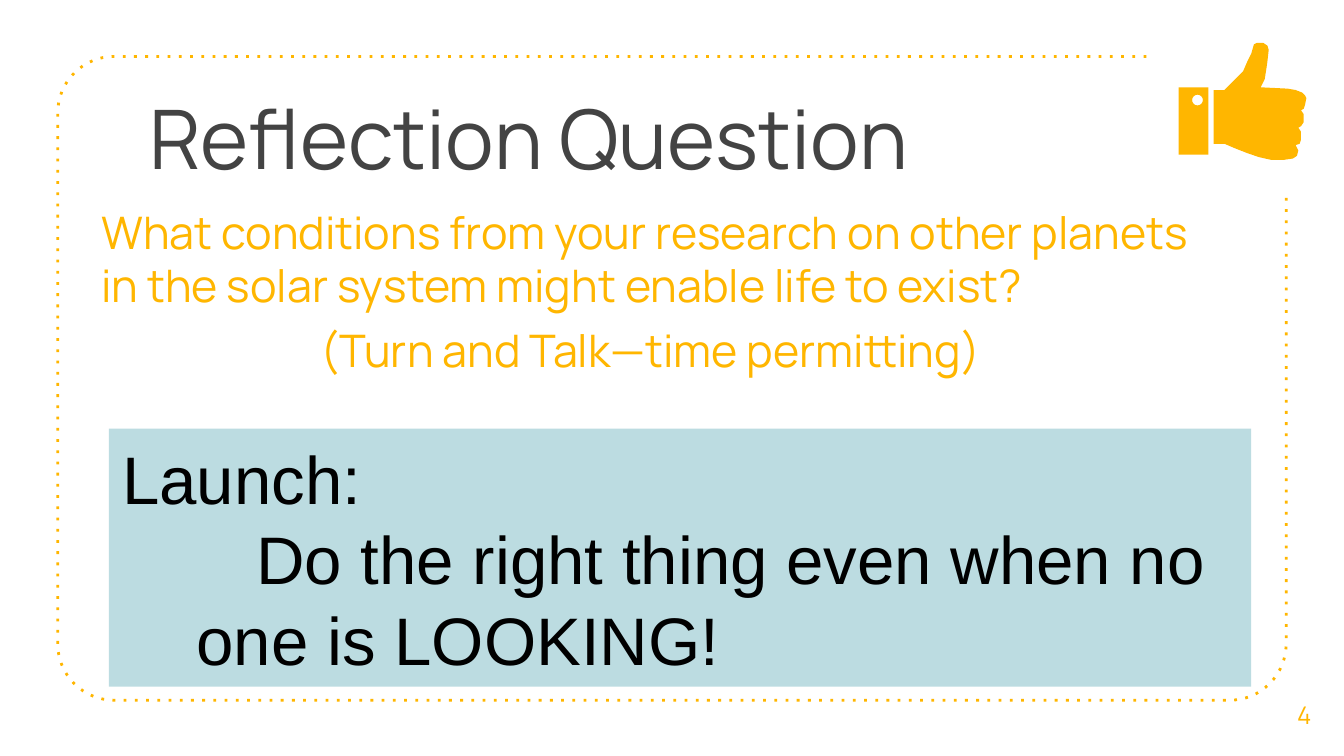
from math import cos, radians, sin

from pptx import Presentation
from pptx.dml.color import RGBColor
from pptx.enum.dml import MSO_LINE as Dash
from pptx.enum.shapes import MSO_SHAPE as Kind
from pptx.enum.text import MSO_ANCHOR as Anchor, MSO_AUTO_SIZE as Fit, PP_ALIGN as Align
from pptx.oxml.ns import qn
from pptx.util import Inches, Pt

GOLD, GREY, BLACK, TEAL = "FFB600", "434343", "000000", "BCDCE1"
CELL = 0.1  # grid cell in inches: 100 columns by 56.25 rows


def grid(*cells):
    return [Inches(n * CELL) for n in cells]


def paint(hue):
    return RGBColor.from_string(hue)


def arc(x, y, r, start, end, steps=16):
    """Points on a circle, with angles running clockwise from the right."""
    turns = [radians(start + (end - start) * i / steps) for i in range(steps + 1)]
    return [(x + r * cos(t), y + r * sin(t)) for t in turns]


def write(shape, *lines, size, hue, font="Manrope", aligns=(), before=0,
          indents=(), anchor=Anchor.TOP):
    """Fill a shape with paragraphs; indents holds (margin, first line) in cells."""
    frame = shape.text_frame
    frame.word_wrap, frame.auto_size = True, Fit.NONE
    frame.vertical_anchor = anchor
    frame.margin_left = frame.margin_right = Inches(0.1)
    frame.margin_top = frame.margin_bottom = Inches(0.1)
    for i, line in enumerate(lines):
        para = frame.paragraphs[0] if i == 0 else frame.add_paragraph()
        para.alignment = aligns[i] if aligns else Align.LEFT
        para.space_before = Pt(before)
        if indents:
            margin, first = grid(*indents[i])
            props = para._p.get_or_add_pPr()
            props.set("marL", str(margin))
            props.set("indent", str(first))
        run = para.add_run()
        run.text = line
        run.font.name, run.font.size = font, Pt(size)
        run.font.color.rgb = paint(hue)


class Page:
    def __init__(self, deck):
        self.slide = deck.slides.add_slide(deck.slide_layouts[5])
        self.shapes = self.slide.shapes

    def title(self, line, box, **style):
        head = self.shapes.title
        head.left, head.top, head.width, head.height = grid(*box)
        write(head, line, **style)

    def text(self, box, *lines, **style):
        write(self.shapes.add_textbox(*grid(*box)), *lines, **style)

    def panel(self, box, fill, *lines, **style):
        shape = self.shapes.add_shape(Kind.RECTANGLE, *grid(*box))
        shape.shadow.inherit = False
        shape.fill.solid()
        shape.fill.fore_color.rgb = paint(fill)
        shape.line.fill.background()
        write(shape, *lines, **style)

    def outline(self, *loops, fill=None, line=None):
        """Draw loops of grid points: closed if filled, open if only a line."""
        loops = [[grid(*point) for point in loop] for loop in loops]
        pen = self.shapes.build_freeform(*loops[0][0], scale=1.0)
        for i, loop in enumerate(loops):
            if i:
                pen.move_to(*loop[0])
            pen.add_line_segments(loop[1:], close=bool(fill))
        shape = pen.convert_to_shape()
        shape.shadow.inherit = False
        if fill:
            shape.fill.solid()
            shape.fill.fore_color.rgb = paint(fill)
        else:
            shape.fill.background()
        if line:
            shape.line.color.rgb = paint(line)
            shape.line.width = Pt(1.5)
            shape.line.dash_style = Dash.ROUND_DOT
            # The wide-gap "dot" preset has no member in the enum.
            dash = shape.line._get_or_add_ln().find(qn("a:prstDash"))
            dash.set("val", "dot")
        else:
            shape.line.fill.background()


CUFF = [(87.7, 6.5), (87.7, 11.5), (89.9, 11.5), (89.9, 6.5)]
HAND = [
    (93.8, 3.2), (93.5, 3.2), (93.3, 3.3), (93.1, 4), (92.8, 4.6), (92.5, 5.3),
    (92.1, 5.7), (91.1, 6.7), (90.3, 6.7), (90.3, 10.7), (91.1, 10.7),
    (91.8, 11), (92.8, 11.4), (93.7, 11.7), (94.6, 11.9), (95.5, 11.9),
    (96.2, 11.8), (96.5, 11.6), (96.6, 11.2), (96.4, 10.8),
    (96.7, 10.7), (96.8, 10.4), (96.8, 9.8), (96.6, 9.5),
    (96.8, 9.4), (97, 9.1), (97, 8.5), (96.8, 8.2),
    (97, 8.1), (97.1, 7.8), (97.2, 7.3), (97.1, 7.1), (96.9, 6.9), (96.4, 6.7),
    (95.8, 6.6), (93.8, 6.5), (94.1, 5.9), (94.2, 5.3), (94.3, 4.6),
    (94.4, 3.7), (94.3, 3.4), (94, 3.2),
]
FRAME = [(85.3, 4.2), *arc(8.5, 8.4, 4.2, 270, 180), *arc(8.5, 47.9, 4.2, 180, 90),
         *arc(91.5, 47.9, 4.2, 90, 0), (95.7, 14.6)]


def main():
    deck = Presentation()
    deck.slide_width, deck.slide_height = grid(100, 56.25)
    page = Page(deck)
    page.outline(FRAME, line=GOLD)
    page.title("Reflection Question", (10.1, 5.5, 60.9, 9.4), size=44, hue=GREY)
    page.text((6.55, 14.2, 83.7, 16),
              "What conditions from your research on other planets in the solar "
              "system might enable life to exist?",
              "(Turn and Talk—time permitting)",
              size=24, hue=GOLD, before=6, aligns=(Align.LEFT, Align.CENTER))
    page.text((94.1, 50.2, 5.9, 6), "4", size=13, hue=GOLD,
              aligns=(Align.CENTER,), anchor=Anchor.MIDDLE)
    page.outline(arc(89.1, 7.45, 0.4, 0, 360), CUFF, fill=GOLD)
    page.outline(HAND, fill=GOLD)
    page.panel((8.1, 31.9, 85, 19.2), TEAL, "Launch:",
               "Do the right thing even when no one is LOOKING!",
               size=36, hue=BLACK, font="Arial", anchor=Anchor.MIDDLE,
               indents=((0, 0), (5.55, 4.45)))
    deck.save("out.pptx")


if __name__ == "__main__":
    main()
